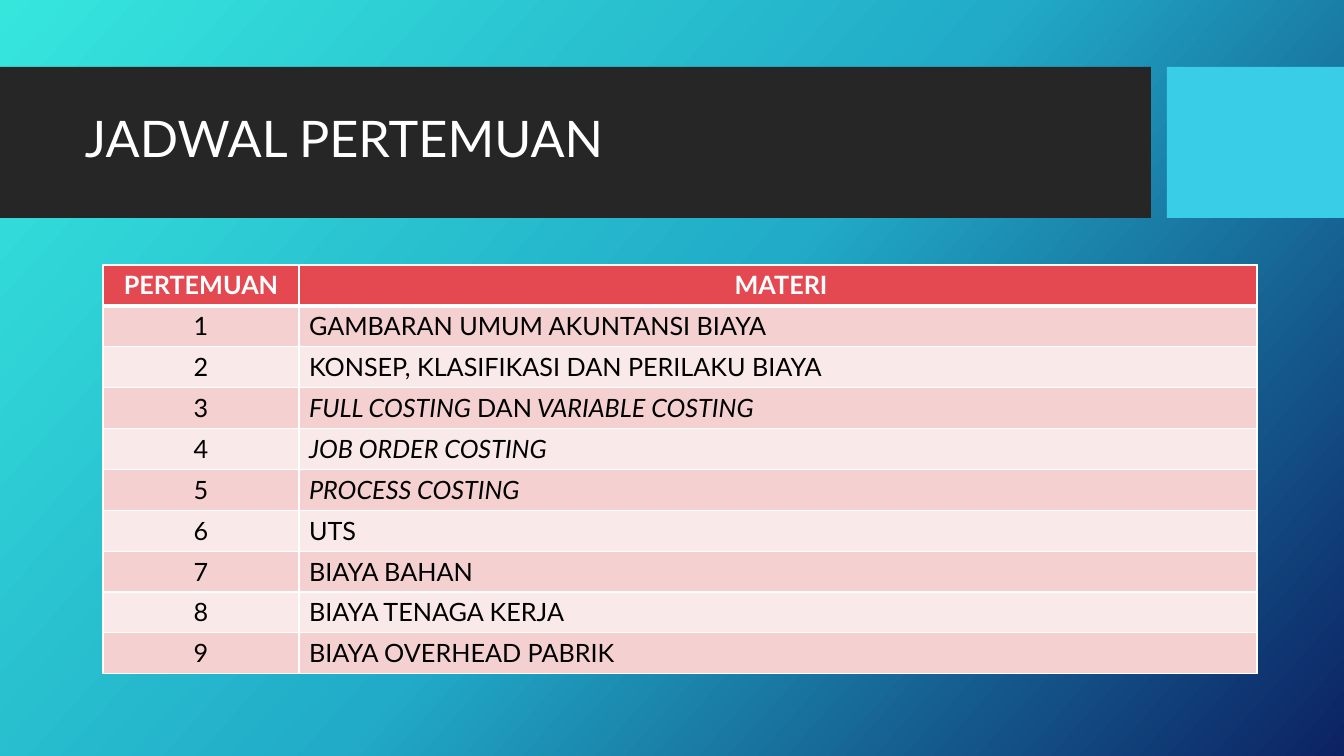
from copy import deepcopy

from lxml.etree import SubElement
from pptx import Presentation
from pptx.dml.color import RGBColor as RGB
from pptx.enum.shapes import MSO_SHAPE as SHAPE
from pptx.enum.text import MSO_ANCHOR as ANCHOR, PP_ALIGN as ALIGN
from pptx.oxml.ns import qn
from pptx.util import Emu, Pt

PX = 914400 / 100.8
FONT = "Lato"
C = {
    "bar": "262626", "accent": "39CDE7", "white": "FFFFFF", "black": "000000",
    "head": "E44951", "odd": "F5D0D0", "even": "FAE9E9",
}
GRADIENT = [(0, "36E6DD"), (0.5, "21ABC8"), (1, "0C2263")]
HEADER = ["PERTEMUAN", " MATERI"]
TOPICS = [
    [("GAMBARAN UMUM AKUNTANSI BIAYA", False)],
    [("KONSEP, KLASIFIKASI DAN PERILAKU BIAYA", False)],
    [("FULL COSTING ", True), ("DAN", False), (" VARIABLE COSTING", True)],
    [("JOB ORDER COSTING", True)],
    [("PROCESS COSTING", True)],
    [("UTS", False)],
    [("BIAYA BAHAN", False)],
    [("BIAYA TENAGA KERJA", False)],
    [("BIAYA OVERHEAD PABRIK", False)],
]


def px(n):
    """Turn px into EMU."""
    return Emu(round(n * PX))


def rgb(name):
    """Look up a palette colour."""
    return RGB.from_string(C[name])


def add_run(p, text, color, **fmt):
    """Append a formatted run to a paragraph."""
    r = p.add_run()
    r.text = text
    for key, value in {"name": FONT, **fmt}.items():
        setattr(r.font, key, value)
    r.font.color.rgb = rgb(color)


def add_background(s):
    """Fill the slide with the diagonal gradient."""
    fill = s.background.fill
    fill.gradient()
    fill.gradient_angle = 360 - 42
    first = s.background._cSld.find(".//" + qn("a:gs"))
    first.addnext(deepcopy(first))
    for stop, (pos, color) in zip(fill.gradient_stops, GRADIENT):
        stop.position = pos
        stop.color.rgb = RGB.from_string(color)


def add_block(s, x, y, w, h, color):
    """Draw a plain rectangle."""
    sp = s.shapes.add_shape(SHAPE.RECTANGLE, px(x), px(y), px(w), px(h))
    sp.shadow.inherit = False
    sp.fill.solid()
    sp.fill.fore_color.rgb = rgb(color)
    sp.line.fill.background()


def add_title_band(s, x, y, w, h, title):
    """Draw the dark bar, its accent block and the title."""
    gap, accent = 16, 177
    bar = w - accent - gap
    add_block(s, x, y, bar, h, "bar")
    add_block(s, x + w - accent, y, accent, h, "accent")
    box = s.shapes.add_textbox(px(x + 75), px(y + 15), px(bar - 91), px(h - 32))
    tf = box.text_frame
    tf.word_wrap = True
    tf.vertical_anchor = ANCHOR.MIDDLE
    p = tf.paragraphs[0]
    p.line_spacing = 0.9
    add_run(p, title, "white", size=Pt(36))


def set_borders(cell, **widths):
    """Give a cell white borders, 1 pt unless a side says otherwise."""
    tcPr = cell._tc.get_or_add_tcPr()
    for i, side in enumerate("LRTB"):
        ln = SubElement(tcPr, qn("a:ln" + side), w=str(Pt(widths.get(side, 1))))
        fill = SubElement(ln, qn("a:solidFill"))
        SubElement(fill, qn("a:srgbClr"), val=C["white"])
        tcPr.insert(i, ln)


def fill_cell(cell, runs, fill, color, align, bold, **widths):
    """Set the fill, borders and text of one cell."""
    cell.fill.solid()
    cell.fill.fore_color.rgb = rgb(fill)
    set_borders(cell, **widths)
    p = cell.text_frame.paragraphs[0]
    p.alignment = align
    for text, italic in runs:
        add_run(p, text, color, size=Pt(18), bold=bold, italic=italic)


def add_schedule(s, x, y, w, h):
    """Build the table of meetings and topics."""
    rows = len(TOPICS) + 1
    table = s.shapes.add_table(rows, 2, px(x), px(y), px(w), px(h)).table
    table.horz_banding = False
    number_w = 196
    for col, width in zip(table.columns, (number_w, w - number_w)):
        col.width = px(width)
    for row in table.rows:
        row.height = px(h / rows)
    for i, text in enumerate(HEADER):
        fill_cell(table.cell(0, i), [(text, False)], "head", "white",
                  ALIGN.CENTER, True, B=3)
    for n, topic in enumerate(TOPICS, 1):
        band = "odd" if n % 2 else "even"
        top = 3 if n == 1 else 1
        cells = [([(str(n), False)], ALIGN.CENTER), (topic, ALIGN.LEFT)]
        for i, (runs, align) in enumerate(cells):
            fill_cell(table.cell(n, i), runs, band, "black", align, False, T=top)


def main():
    """Build and save the slide."""
    prs = Presentation()
    prs.slide_width, prs.slide_height = px(1344), px(756)
    s = prs.slides.add_slide(prs.slide_layouts[6])
    add_background(s)
    add_title_band(s, 0, 67, 1344, 151, "JADWAL PERTEMUAN")
    add_schedule(s, 103, 265, 1154, 409)
    prs.save("out.pptx")


if __name__ == "__main__":
    main()
